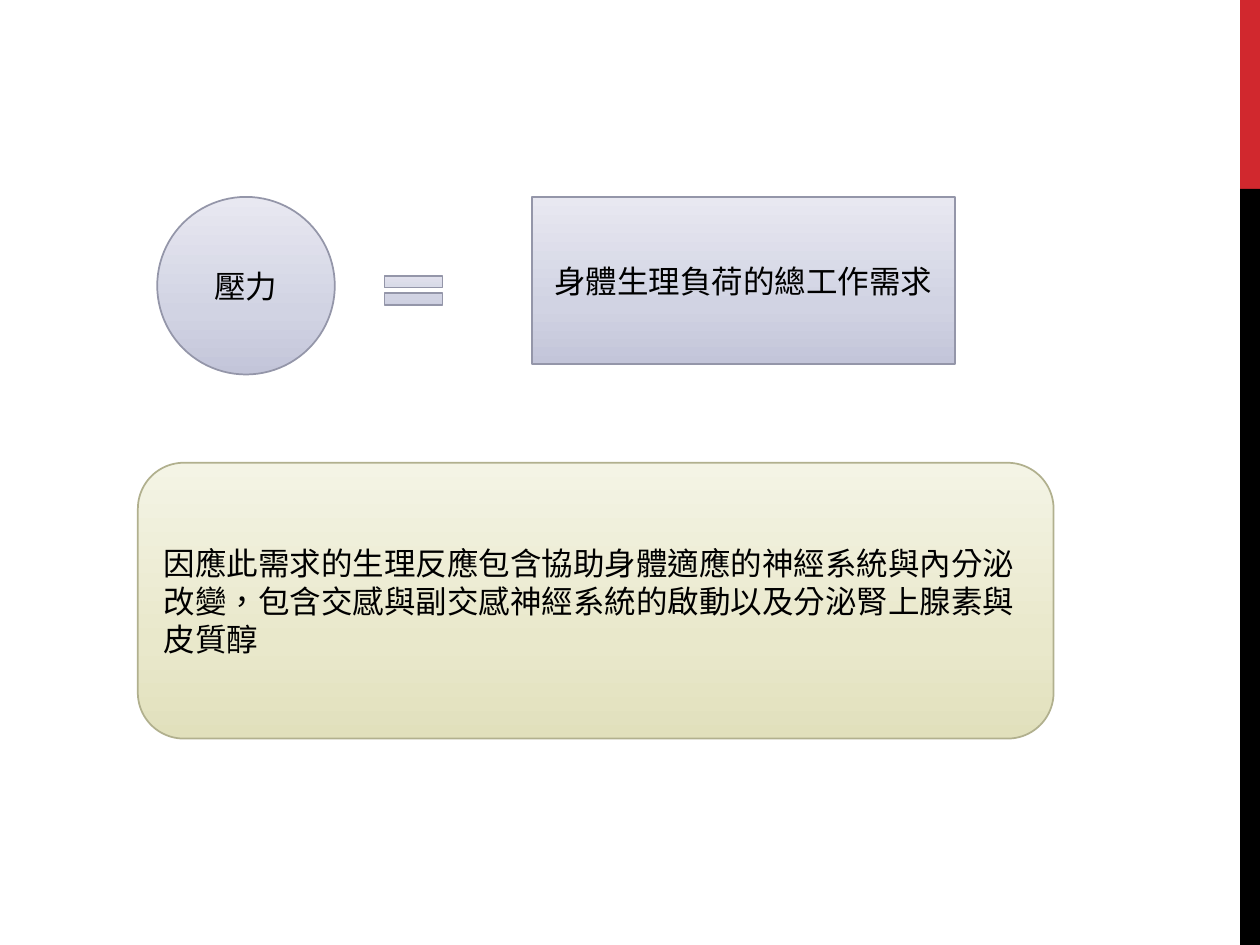
"""Build a slide that defines stress and describes the body's response to it."""
from copy import deepcopy

from pptx import Presentation
from pptx.dml.color import RGBColor
from pptx.enum.lang import MSO_LANGUAGE_ID as Lang
from pptx.enum.shapes import MSO_SHAPE as Shape
from pptx.enum.text import MSO_ANCHOR as Anchor, PP_ALIGN as Align
from pptx.oxml.ns import qn
from pptx.util import Cm, Pt

RED = RGBColor(0xD1, 0x28, 0x2E)
BLACK = RGBColor(0x00, 0x00, 0x00)
LAVENDER = [RGBColor(0xC3, 0xC5, 0xD9), RGBColor(0xD1, 0xD3, 0xE3), RGBColor(0xE8, 0xE8, 0xF1)]
LAVENDER_LINE = RGBColor(0x94, 0x96, 0xA9)
OLIVE = [RGBColor(0xE1, 0xE0, 0xBC), RGBColor(0xE9, 0xE8, 0xCB), RGBColor(0xF4, 0xF4, 0xE5)]
OLIVE_LINE = RGBColor(0xB1, 0xB0, 0x8E)
STOPS = [0, 0.35, 1]

SLIDE_W, SLIDE_H = 25.4, 19.05
BAR_W, RED_H = 0.4, 3.81
BARS = [(0, RED_H, RED), (RED_H, SLIDE_H - RED_H, BLACK)]

RESPONSE = (
    "因應此需求的生理反應包含協助身體適應的神經系統與內分泌改變，"
    "包含交感與副交感神經系統的啟動以及分泌腎上腺素與皮質醇"
)
LAVENDER_STYLE = (LAVENDER, LAVENDER_LINE)
OLIVE_STYLE = (OLIVE, OLIVE_LINE)
PANELS = [
    (Shape.OVAL, (3.17, 3.97, 3.58, 3.58), LAVENDER_STYLE, "壓力", Align.CENTER),
    (Shape.MATH_EQUAL, (7.54, 5.36, 1.59, 0.99), LAVENDER_STYLE, "", Align.CENTER),
    (Shape.RECTANGLE, (10.72, 3.97, 8.53, 3.37), LAVENDER_STYLE, "身體生理負荷的總工作需求", Align.CENTER),
    (Shape.ROUNDED_RECTANGLE, (2.78, 9.33, 18.46, 5.56), OLIVE_STYLE, RESPONSE, Align.LEFT),
]


def add_shape(slide, kind, box):
    sp = slide.shapes.add_shape(kind, *(Cm(v) for v in box))
    sp.shadow.inherit = False
    return sp


def fill_gradient(sp, colors):
    fill = sp.fill
    fill.gradient()
    fill.gradient_angle = 90
    stop_list = next(sp._element.spPr.iter(qn("a:gsLst")))
    stop_list.append(deepcopy(stop_list[0]))
    for stop, position, color in zip(fill.gradient_stops, STOPS, colors):
        stop.position = position
        stop.color.rgb = color


def add_text(sp, text, align):
    tf = sp.text_frame
    tf.word_wrap = True
    tf.vertical_anchor = Anchor.MIDDLE
    p = tf.paragraphs[0]
    p.alignment = align
    r = p.add_run()
    r.text = text
    r.font.name = "Arial"
    r.font.size = Pt(18)
    r.font.color.rgb = BLACK
    r.font.language_id = Lang.TRADITIONAL_CHINESE


def main():
    prs = Presentation()
    prs.slide_width, prs.slide_height = Cm(SLIDE_W), Cm(SLIDE_H)
    slide = prs.slides.add_slide(prs.slide_layouts[6])
    for top, height, color in BARS:
        bar = add_shape(slide, Shape.RECTANGLE, (SLIDE_W - BAR_W, top, BAR_W, height))
        bar.fill.solid()
        bar.fill.fore_color.rgb = color
        bar.line.fill.background()
    for kind, box, (colors, line_color), text, align in PANELS:
        sp = add_shape(slide, kind, box)
        fill_gradient(sp, colors)
        sp.line.color.rgb = line_color
        sp.line.width = Pt(1)
        if text:
            add_text(sp, text, align)
    prs.save("out.pptx")


if __name__ == "__main__":
    main()
